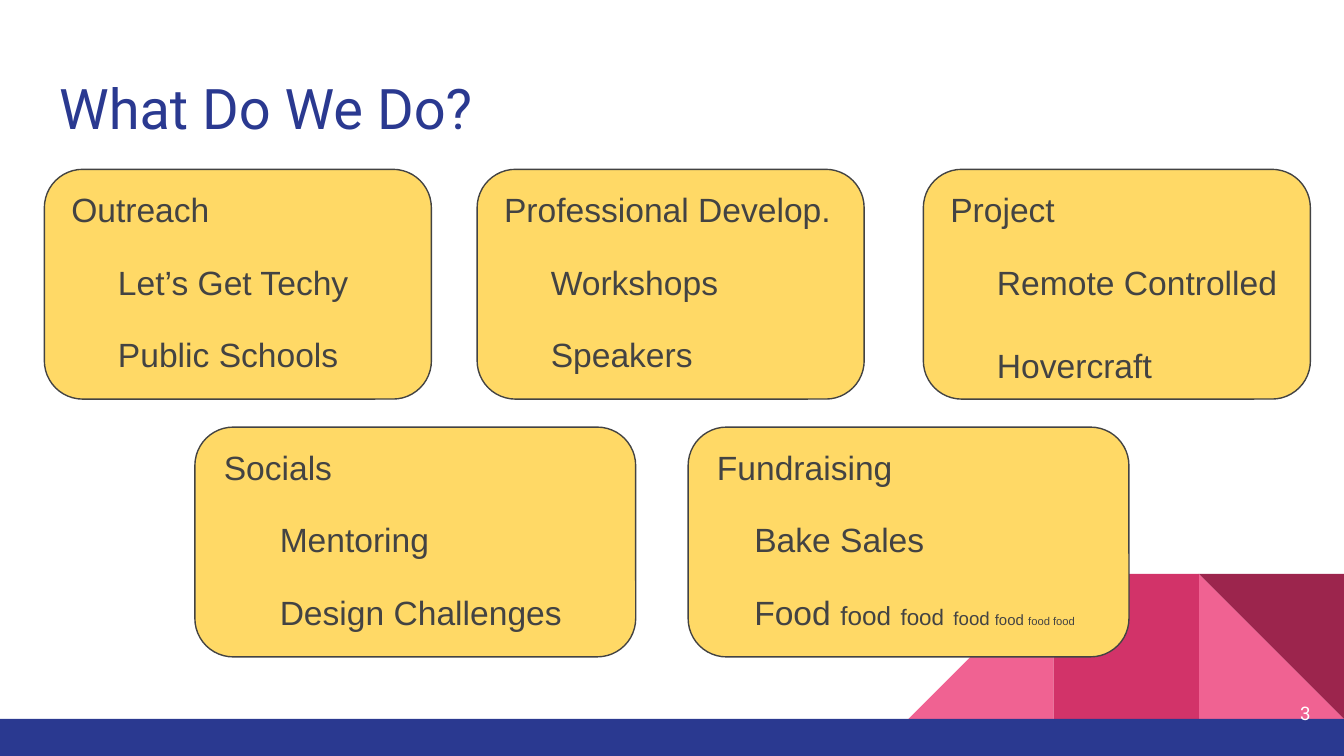
from copy import deepcopy
from pptx import Presentation
from pptx.dml.color import RGBColor
from pptx.enum.shapes import MSO_SHAPE as Shape
from pptx.enum.text import MSO_ANCHOR as Anchor, MSO_AUTO_SIZE as AutoSize, PP_ALIGN as Align
from pptx.oxml.ns import qn
from pptx.util import Inches, Pt

WIDTH, HEIGHT = Inches(10), Inches(5.625)
NAVY, PINK, ROSE, WINE = "2A3990", "F06292", "D23369", "9C254D"
YELLOW, INK, WHITE = "FFD966", "434343", "FFFFFF"
SPACE = Pt(5)
GAP = 16

FOOD = [("Food ", 18), ("food", 14), (" ", 18), ("food", 12), (" ", 18),
        ("food ", 10), ("food ", 8), ("food food", 6)]

TOP_ROW = [
    (3.3, "Outreach", ["Let’s Get Techy", "Public Schools"], 5, GAP),
    (35.5, "Professional Develop.", ["Workshops", "Speakers"], 5, GAP),
    (68.7, "Project", ["Remote Controlled", "Hovercraft"], 5, 22),
]
BOTTOM_ROW = [
    (14.5, "Socials", ["Mentoring", "Design Challenges"], 6, GAP),
    (51.2, "Fundraising", ["Bake Sales", FOOD], 4, GAP),
]


def colour(hex_code):
    return RGBColor.from_string(hex_code)


def to_slide(box):
    left, top, width, height = box
    return [int(share * side / 100) for share, side in
            ((left, WIDTH), (top, HEIGHT), (width, WIDTH), (height, HEIGHT))]


def place(part, box):
    part.left, part.top, part.width, part.height = to_slide(box)


def style(run, size, font, hex_code):
    run.font.size = Pt(size)
    run.font.name = font
    run.font.color.rgb = colour(hex_code)


def set_frame(frame, anchor):
    frame.word_wrap = True
    frame.auto_size = AutoSize.NONE
    frame.vertical_anchor = anchor
    frame.margin_left = frame.margin_right = Inches(0.1)
    frame.margin_top = frame.margin_bottom = Inches(0.1)


def add_block(slide, kind, box, fill, front):
    block = slide.shapes.add_shape(kind, *to_slide(box))
    block.shadow.inherit = False
    block.fill.solid()
    block.fill.fore_color.rgb = colour(fill)
    block.line.fill.background()
    front._element.addprevious(block._element)
    return block


def add_footer_art(slide, box, front):
    left, top, width, height = box
    side = width / 3
    tiles = [[left + column * side, top, side, height] for column in range(3)]
    add_block(slide, Shape.RIGHT_TRIANGLE, tiles[2], PINK, front)
    slope = add_block(slide, Shape.RIGHT_TRIANGLE, tiles[0], PINK, front)
    slope._element.spPr.find(qn("a:xfrm")).set("flipH", "1")
    add_block(slide, Shape.RECTANGLE, tiles[1], ROSE, front)
    corner = add_block(slide, Shape.RIGHT_TRIANGLE, tiles[2], WINE, front)
    corner.rotation = 180
    bottom = top + height
    add_block(slide, Shape.RECTANGLE, (0, bottom, 100, 100 - bottom), NAVY, front)


def set_title(title, box):
    place(title, box)
    title.text_frame.text = "What Do We Do?"
    set_frame(title.text_frame, Anchor.TOP)
    heading = title.text_frame.paragraphs[0]
    heading.alignment = Align.LEFT
    style(heading.runs[0], 30, "Roboto", NAVY)


def add_page_number(slide, box):
    number = slide.shapes.add_textbox(*to_slide(box))
    number.text_frame.text = "3"
    set_frame(number.text_frame, Anchor.MIDDLE)
    line = number.text_frame.paragraphs[0]
    line.alignment = Align.RIGHT
    style(line.runs[0], 10, "Roboto", WHITE)


def write_line(line, pieces, indent, before):
    properties = line._p.get_or_add_pPr()
    properties.set("marL", str(indent))
    properties.set("indent", "0")
    properties.append(properties.makeelement(qn("a:buNone"), {}))
    line.alignment = Align.LEFT
    line.line_spacing = 1.05
    line.space_before = Pt(before)
    line.space_after = Pt(0)
    for words, size in pieces:
        run = line.add_run()
        run.text = words
        style(run, size, "Arial", INK)


def fill_card(slide, body, box, heading, items, spaces, last_gap):
    left, top, width, height = box
    card = add_block(slide, Shape.ROUNDED_RECTANGLE, box, YELLOW, body)
    card.adjustments[0] = 0.167
    card.line.color.rgb = colour(INK)
    card.line.width = Pt(0.75)

    place(body, (left + 0.035 * width, top + 0.02 * height, 0.94 * width, 0.755 * height))
    frame = body.text_frame
    set_frame(frame, Anchor.TOP)
    write_line(frame.paragraphs[0], [(heading, 18)], 0, 0)
    for item, gap in zip(items, (GAP, last_gap)):
        pieces = [(item, 18)] if isinstance(item, str) else item
        write_line(frame.add_paragraph(), pieces, spaces * SPACE, gap)


def add_card_placeholders(layout, count):
    first = layout.placeholders[1]._element
    for number in range(1, count):
        extra = deepcopy(first)
        extra.nvSpPr.cNvPr.set("id", str(20 + number))
        extra.nvSpPr.nvPr.find(qn("p:ph")).set("idx", str(20 + number))
        first.getparent().append(extra)


def main():
    deck = Presentation()
    deck.slide_width, deck.slide_height = WIDTH, HEIGHT
    layout = deck.slide_layouts[1]
    add_card_placeholders(layout, len(TOP_ROW + BOTTOM_ROW))
    slide = deck.slides.add_slide(layout)
    title, *bodies = list(slide.placeholders)

    add_footer_art(slide, (67.6, 75.9, 32.4, 19.2), title)
    set_title(title, (3.4, 8, 93.2, 11.7))
    waiting = iter(bodies)
    for cards, top, width in ((TOP_ROW, 22.4, 28.8), (BOTTOM_ROW, 56.5, 32.8)):
        for left, *content in cards:
            fill_card(slide, next(waiting), (left, top, width, 30.4), *content)
    add_page_number(slide, (92.5, 90.5, 6, 7.6))
    deck.save("out.pptx")


if __name__ == "__main__":
    main()
